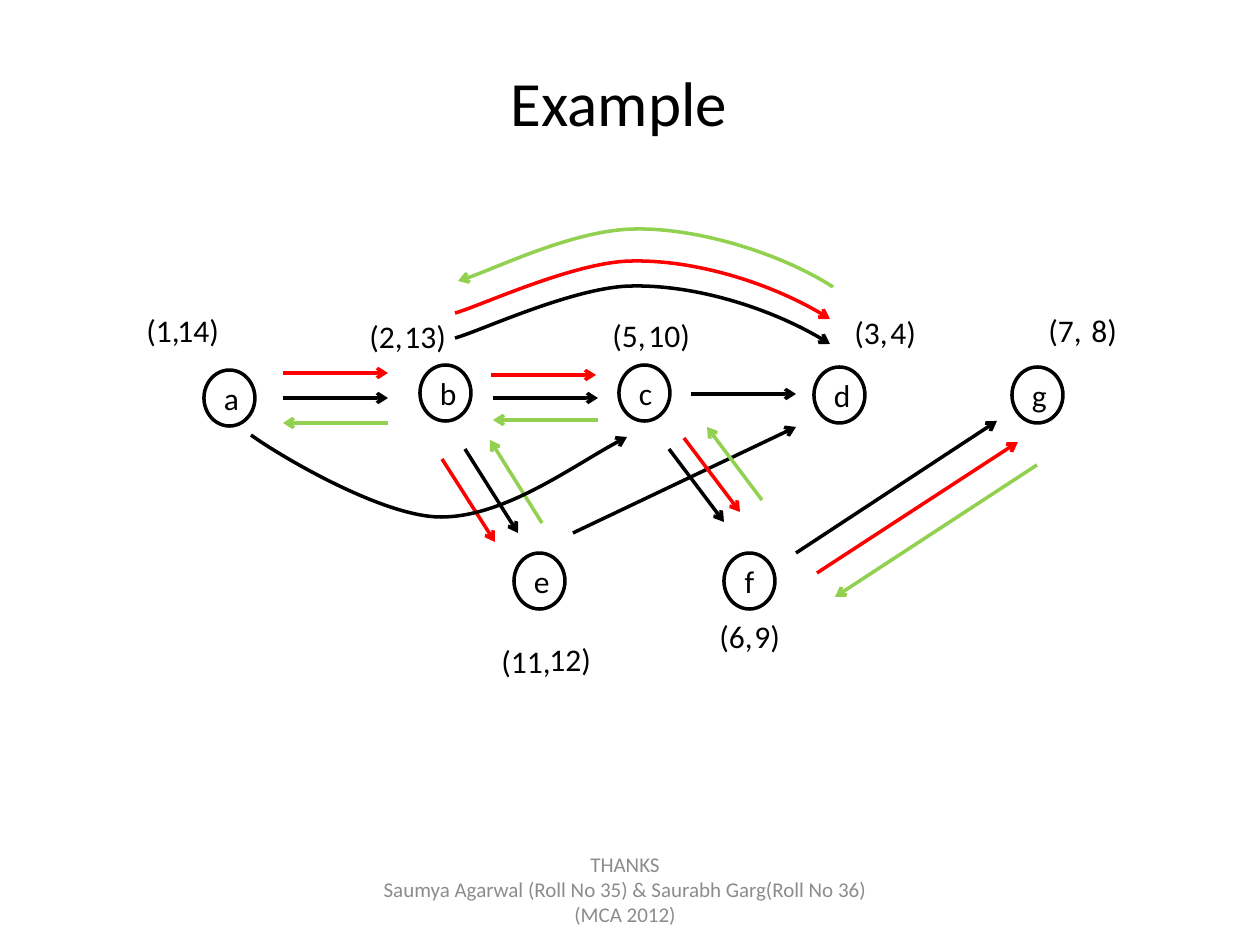
"""Draw a directed graph with its forward, tree and return arrows."""
from dataclasses import dataclass

from lxml.etree import SubElement
from pptx import Presentation
from pptx.dml.color import RGBColor as Rgb
from pptx.enum.shapes import MSO_CONNECTOR as Link, MSO_SHAPE as Kind
from pptx.enum.text import MSO_ANCHOR as Anchor, PP_ALIGN as Align
from pptx.oxml.ns import qn
from pptx.util import Emu, Pt

SCALE = 914400 / 126
HUES = {"black": "000000", "red": "FF0000", "green": "92D050",
        "white": "FFFFFF", "gray": "8C8C8C"}


@dataclass
class Node:
    name: str
    x: int
    y: int


@dataclass
class Label:
    text: str
    x: int
    y: int


@dataclass
class Arrow:
    hue: str
    x1: int
    y1: int
    x2: int
    y2: int


@dataclass
class Curve:
    hue: str
    points: list[tuple[int, int]]


ARC = [(455, 338), (476, 333), (575, 286), (633, 286),
       (696, 285), (779, 311), (830, 344)]
DIP = [(251, 435), (280, 456), (383, 517), (441, 517),
       (504, 517), (581, 460), (627, 437)]

NODES = [
    Node("a", 204, 370), Node("f", 724, 553), Node("e", 514, 553),
    Node("g", 1012, 367), Node("d", 814, 367), Node("c", 619, 365),
    Node("b", 420, 365),
]
ARROWS = [
    Arrow("black", 283, 398, 388, 398),
    Arrow("black", 493, 398, 598, 398),
    Arrow("black", 691, 394, 796, 394),
    Arrow("black", 465, 449, 518, 533),
    Arrow("black", 669, 449, 724, 522),
    Arrow("black", 573, 533, 796, 427),
    Arrow("black", 796, 553, 997, 421),
    Arrow("red", 283, 373, 388, 373),
    Arrow("red", 491, 375, 596, 375),
    Arrow("red", 684, 438, 740, 512),
    Arrow("red", 817, 573, 1018, 442),
    Arrow("red", 442, 459, 495, 542),
    Arrow("green", 1037, 465, 835, 597),
    Arrow("green", 762, 500, 707, 427),
    Arrow("green", 598, 420, 493, 420),
    Arrow("green", 388, 423, 283, 423),
    Arrow("green", 542, 523, 490, 440),
]
CURVES = [
    Curve("black", ARC),
    Curve("black", DIP),
    Curve("red", [(x, y - 25) for x, y in ARC]),
    Curve("green", [(x + 3, y - 57) for x, y in reversed(ARC)]),
]
LABELS = [
    Label("(1,", 134, 305), Label("14)", 165, 305),
    Label("(2,", 357, 311), Label("13)", 392, 311),
    Label("(3,", 842, 307), Label("4)", 878, 307),
    Label("(5,", 600, 310), Label("10)", 636, 310),
    Label("(6,", 707, 611), Label("9)", 742, 611),
    Label("(7,", 1036, 305), Label("8)", 1079, 305),
    Label("(11,", 489, 636), Label("12)", 537, 634),
]


def px(*sizes: int) -> list[Emu]:
    """Turn pixels into EMU."""
    return [Emu(round(size * SCALE)) for size in sizes]


def tint(hue: str) -> Rgb:
    """Look up a colour."""
    return Rgb.from_string(HUES[hue])


def write(shape, text: str, size: int, hue: str = "black",
          align: Align = Align.CENTER) -> None:
    """Fill a shape with styled paragraphs."""
    frame = shape.text_frame
    frame.word_wrap = True
    frame.text = text
    for para in frame.paragraphs:
        para.alignment = align
        para.font.name = "Calibri"
        para.font.size = Pt(size)
        para.font.color.rgb = tint(hue)


def ink(shape, hue: str) -> None:
    """Give a shape its line."""
    shape.line.color.rgb = tint(hue)
    shape.line.width = Pt(2)


def point(shape) -> None:
    """Put an open arrowhead at the end of a line."""
    line = shape.element.spPr.find(qn("a:ln"))
    SubElement(line, qn("a:tailEnd"), type="arrow")


def draw_node(slide, node: Node) -> None:
    """Draw a named circle."""
    shape = slide.shapes.add_shape(Kind.OVAL, *px(node.x, node.y, 51, 56))
    shape.shadow.inherit = False
    shape.fill.solid()
    shape.fill.fore_color.rgb = tint("white")
    ink(shape, "black")
    write(shape, node.name, 18)
    shape.text_frame.vertical_anchor = Anchor.MIDDLE


def draw_arrow(slide, arrow: Arrow) -> None:
    """Draw a straight arrow."""
    ends = px(arrow.x1, arrow.y1, arrow.x2, arrow.y2)
    shape = slide.shapes.add_connector(Link.STRAIGHT, *ends)
    ink(shape, arrow.hue)
    point(shape)
    SubElement(shape.element.spPr, qn("a:effectLst"))


def draw_curve(slide, curve: Curve) -> None:
    """Draw a curved arrow from cubic segments."""
    start, *rest = curve.points
    pen = slide.shapes.build_freeform(*start, scale=SCALE)
    pen.add_line_segments(rest, close=False)
    shape = pen.convert_to_shape()
    track = shape.element.spPr.find(".//" + qn("a:path"))
    steps = track.findall(qn("a:lnTo"))
    for i in range(0, len(steps), 3):
        bend = SubElement(track, qn("a:cubicBezTo"))
        for step in steps[i:i + 3]:
            bend.append(step[0])
            track.remove(step)
    shape.shadow.inherit = False
    shape.fill.background()
    ink(shape, curve.hue)
    point(shape)


def draw_label(slide, label: Label) -> None:
    """Write half of a number pair."""
    box = slide.shapes.add_textbox(*px(label.x, label.y, 97, 50))
    write(box, label.text, 18, align=Align.LEFT)


def main() -> None:
    """Build and save the slide."""
    deck = Presentation()
    deck.slide_width, deck.slide_height = px(1260, 945)
    slide = deck.slides.add_slide(deck.slide_layouts[5])
    title = slide.shapes.title
    title.left, title.top, title.width, title.height = px(272, 57, 694, 89)
    write(title, "Example", 36)
    for draw, items in ((draw_node, NODES), (draw_arrow, ARROWS),
                        (draw_curve, CURVES), (draw_label, LABELS)):
        for item in items:
            draw(slide, item)
    foot = slide.shapes.add_textbox(*px(357, 851, 536, 76))
    write(foot, "THANKS\nSaumya Agarwal (Roll No 35) & "
          "Saurabh Garg(Roll No 36) (MCA 2012)", 12, "gray")
    foot.text_frame.vertical_anchor = Anchor.MIDDLE
    deck.save("out.pptx")


if __name__ == "__main__":
    main()
